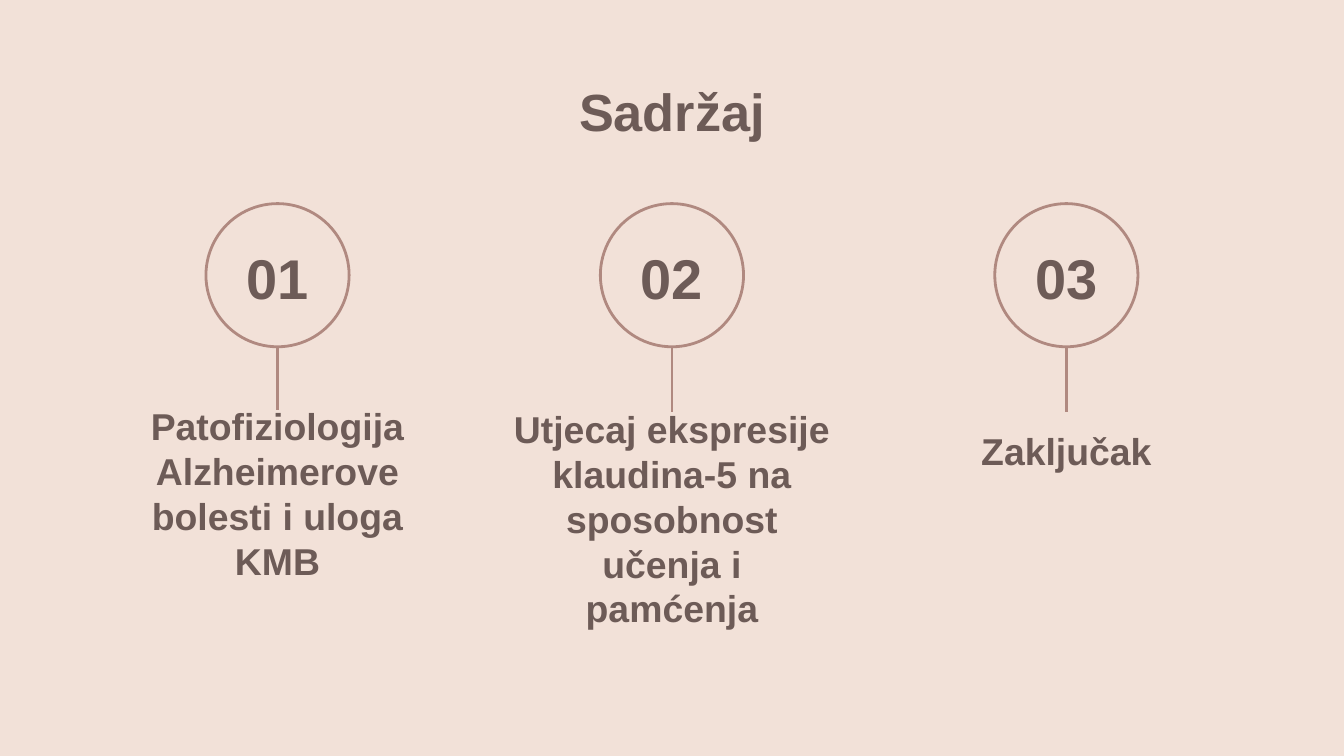
from dataclasses import dataclass

from pptx import Presentation
from pptx.dml.color import RGBColor
from pptx.enum.shapes import MSO_CONNECTOR as CONN, MSO_SHAPE as SHAPE
from pptx.enum.text import MSO_ANCHOR as ANCHOR, PP_ALIGN as ALIGN
from pptx.oxml.ns import qn
from pptx.util import Pt
from lxml.etree import SubElement


@dataclass(frozen=True)
class Theme:
    font: str = "Arial"
    back: RGBColor = RGBColor(0xF2, 0xE1, 0xD8)
    text: RGBColor = RGBColor(0x6D, 0x5B, 0x57)
    line: RGBColor = RGBColor(0xB0, 0x89, 0x80)
    title: int = 28
    number: int = 30
    label: int = 20
    stroke: float = 1.5
    inset: float = 7.2
    leading: float = 1.2


class Deck:
    def __init__(self, prs, theme):
        self.theme = theme
        self.slide = prs.slides.add_slide(prs.slide_layouts[5])
        fill = self.slide.background.fill
        fill.solid()
        fill.fore_color.rgb = theme.back

    def set_text(self, sp, text, size, anchor):
        t = self.theme
        tf = sp.text_frame
        tf.word_wrap = True
        tf.vertical_anchor = anchor
        tf.margin_left = tf.margin_right = Pt(t.inset)
        tf.margin_top = tf.margin_bottom = Pt(t.inset)
        p = tf.paragraphs[0]
        p.alignment = ALIGN.CENTER
        p.space_before = Pt(0)
        p.line_spacing = Pt(size * t.leading)
        r = p.add_run()
        r.text = text
        r.font.name = t.font
        r.font.size = Pt(size)
        r.font.bold = True
        r.font.color.rgb = t.text

    def title(self, text, x, y, w, h):
        sp = self.slide.shapes.title
        sp.left, sp.top, sp.width, sp.height = Pt(x), Pt(y), Pt(w), Pt(h)
        self.set_text(sp, text, self.theme.title, ANCHOR.TOP)

    def text(self, text, x, y, w, h, size, anchor):
        sp = self.slide.shapes.add_textbox(Pt(x), Pt(y), Pt(w), Pt(h))
        self.set_text(sp, text, size, anchor)

    def stroke(self, sp):
        sp.line.color.rgb = self.theme.line
        sp.line.width = Pt(self.theme.stroke)

    def circle(self, cx, y, d):
        s = self.slide.shapes.add_shape(SHAPE.OVAL, Pt(cx - d / 2), Pt(y), Pt(d), Pt(d))
        s.shadow.inherit = False
        s.fill.background()
        self.stroke(s)

    def stem(self, x, top, bottom):
        s = self.slide.shapes.add_connector(CONN.STRAIGHT, Pt(x), Pt(top), Pt(x), Pt(bottom))
        self.stroke(s)
        SubElement(s._element.spPr, qn("a:effectLst"))


def main():
    prs = Presentation()
    prs.slide_width, prs.slide_height = Pt(720), Pt(405)
    theme = Theme()
    deck = Deck(prs, theme)
    deck.title("Sadržaj", 56.7, 35.3, 606.6, 45.4)

    topics = [
        ("Patofiziologija Alzheimerove bolesti i uloga KMB", 4, 209, 219.6),
        ("Utjecaj ekspresije klaudina-5 na sposobnost učenja i pamćenja", 5, 210.5, 221),
        ("Zaključak", 1, 222, 221),
    ]
    width, step, ring_top, ring = 184.4, 211.3, 109.1, 76.7
    for i, (label, lines, top, stem_end) in enumerate(topics):
        cx = 360 + (i - 1) * step
        x = cx - width / 2
        height = lines * theme.label * theme.leading + 2 * theme.inset
        deck.circle(cx, ring_top, ring)
        deck.stem(cx, ring_top + ring, stem_end)
        deck.text(f"{i + 1:02}", x, 125.3, width, 46.8, theme.number, ANCHOR.MIDDLE)
        deck.text(label, x, top, width, height, theme.label, ANCHOR.TOP)

    prs.save("out.pptx")


if __name__ == "__main__":
    main()
